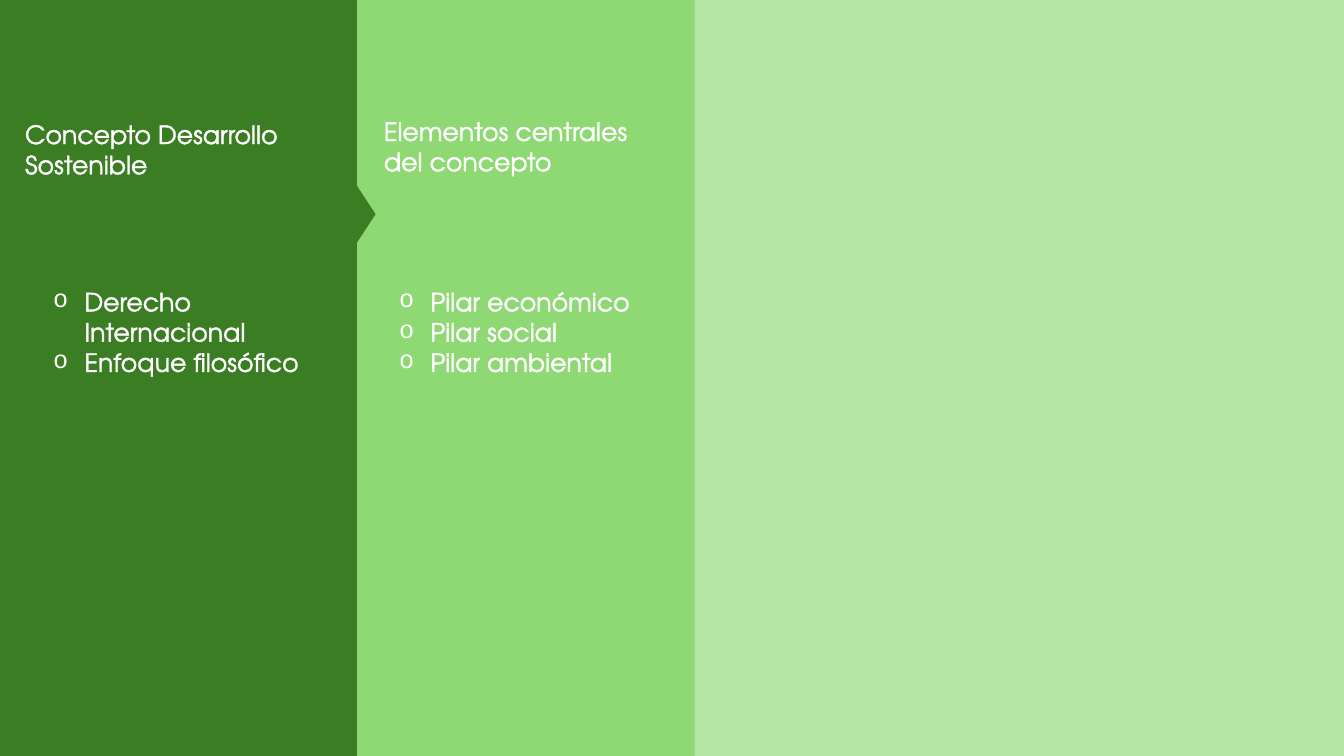
from lxml.etree import SubElement
from pptx import Presentation
from pptx.dml.color import RGBColor
from pptx.enum.shapes import MSO_SHAPE
from pptx.enum.text import MSO_AUTO_SIZE, PP_ALIGN
from pptx.oxml import parse_xml
from pptx.oxml.ns import nsdecls, qn
from pptx.util import Inches, Pt

PALE_GREEN = RGBColor(0xB4, 0xE5, 0xA2)
LIGHT_GREEN = RGBColor(0x8E, 0xD9, 0x73)
DARK_GREEN = RGBColor(0x3B, 0x7D, 0x23)
WHITE = RGBColor(0xFF, 0xFF, 0xFF)


class ColumnSlide:
    font_name = "TeX Gyre Adventor"
    font_size = Pt(18)
    bullet_indent = Inches(0.31)

    def __init__(self, page, background):
        self.page = page
        fill = page.background.fill
        fill.solid()
        fill.fore_color.rgb = background

    def shape(self, kind, left, top, width, height, color, rotation=0):
        shape = self.page.shapes.add_shape(
            kind, Inches(left), Inches(top), Inches(width), Inches(height))
        shape.shadow.inherit = False
        shape.fill.solid()
        shape.fill.fore_color.rgb = color
        shape.line.fill.background()
        shape.rotation = rotation

    def text(self, left, top, width, height, lines, bulleted=False):
        box = self.page.shapes.add_textbox(
            Inches(left), Inches(top), Inches(width), Inches(height))
        frame = box.text_frame
        frame.word_wrap = True
        frame.auto_size = MSO_AUTO_SIZE.SHAPE_TO_FIT_TEXT
        frame.text = "\n".join(lines)
        for para in frame.paragraphs:
            para.alignment = PP_ALIGN.LEFT
            if bulleted:
                self.bullet(para)
            for span in para.runs:
                self.format(span)

    def bullet(self, para):
        properties = para._p.get_or_add_pPr()
        properties.set("marL", str(self.bullet_indent))
        properties.set("indent", str(-self.bullet_indent))
        SubElement(properties, qn("a:buFont"), typeface="Courier New")
        SubElement(properties, qn("a:buChar"), char="o")

    def format(self, span):
        span.font.name = self.font_name
        span.font.size = self.font_size
        span.font.color.rgb = WHITE
        outline = parse_xml(
            f'<a:ln {nsdecls("a")} w="{Pt(1)}"><a:solidFill>'
            f'<a:srgbClr val="{WHITE}"/></a:solidFill></a:ln>')
        span._r.get_or_add_rPr().insert(0, outline)


def main():
    deck = Presentation()
    deck.slide_width = Inches(13.33)
    deck.slide_height = Inches(7.5)
    slide = ColumnSlide(deck.slides.add_slide(deck.slide_layouts[6]), PALE_GREEN)

    slide.shape(MSO_SHAPE.RECTANGLE, 3.54, 0, 3.35, 7.5, LIGHT_GREEN)
    slide.text(3.71, 1.1, 2.66, 0.71, ["Elementos centrales del concepto"])
    slide.text(3.86, 2.79, 2.93, 1.01,
               ["Pilar económico", "Pilar social", "Pilar ambiental"], bulleted=True)

    slide.shape(MSO_SHAPE.RECTANGLE, 0, 0, 3.54, 7.5, DARK_GREEN)
    slide.text(0.15, 1.13, 2.87, 0.71, ["Concepto Desarrollo Sostenible"])
    slide.text(0.43, 2.79, 2.86, 1.01,
               ["Derecho Internacional", "Enfoque filosófico"], bulleted=True)
    slide.shape(MSO_SHAPE.ISOSCELES_TRIANGLE, 3.34, 2.03, 0.58, 0.19,
                DARK_GREEN, rotation=90)

    deck.save("out.pptx")


if __name__ == "__main__":
    main()
